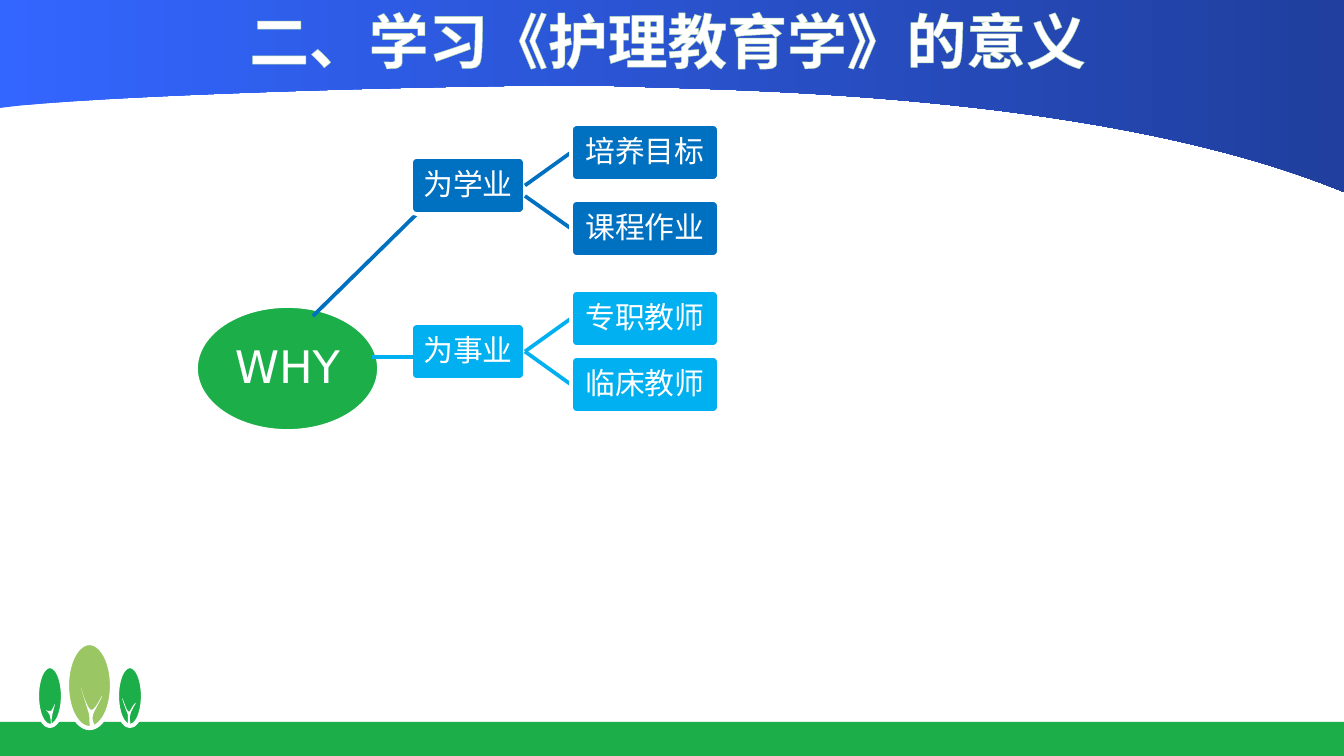
import lxml.etree
import pptx
import pptx.dml.color
import pptx.enum.shapes
import pptx.enum.text
import pptx.oxml.ns
import pptx.util

PX = 6804
GREEN, LIME, WHITE = "1CAE49", "9AC763", "FFFFFF"
CJK = "Noto Sans CJK SC"
qn = pptx.oxml.ns.qn
rgb = pptx.dml.color.RGBColor.from_string
MSO = pptx.enum.shapes.MSO_SHAPE


def add_block(kind, box, fill, line_width=0):
    block = slide.shapes.add_shape(kind, *[n * PX for n in box])
    block.shadow.inherit = False
    block.fill.solid()
    block.fill.fore_color.rgb = rgb(fill)
    if line_width:
        block.line.color.rgb = rgb(WHITE)
        block.line.width = pptx.util.Pt(line_width)
    else:
        block.line.fill.background()
    return block


def add_branch(ends, color):
    branch = slide.shapes.add_connector(
        pptx.enum.shapes.MSO_CONNECTOR.STRAIGHT, *[n * PX for n in ends])
    branch.line.color.rgb = rgb(color)
    branch.line.width = pptx.util.Pt(2)
    lxml.etree.SubElement(branch._element.spPr, qn("a:effectLst"))
    return branch


prs = pptx.Presentation()
prs.slide_width = 1344 * PX
prs.slide_height = 756 * PX
slide = prs.slides.add_slide(prs.slide_layouts[6])

add_block(MSO.RECTANGLE, (0, 722, 1344, 36), GREEN)
for crown, color in [((37, 666, 26, 60), GREEN), ((67, 643, 45, 85), LIME),
                     ((117, 666, 26, 60), GREEN)]:
    add_block(MSO.OVAL, crown, color, 2.25)

banner_outline = [(0, 0), (0, 108), (98, 94, 519, 83, 614, 86),
                  (711, 90, 1097, 90, 1344, 192), (1344, 0)]
trunk_outlines = [
    [(81, 688), (81, 689, 87, 707, 89, 714), (90, 719, 89, 726, 90, 728),
     (91, 730, 94, 728, 95, 727), (95, 725, 91, 720, 93, 715),
     (94, 711, 102, 698, 102, 696), (102, 695, 95, 711, 91, 710),
     (87, 708, 83, 694, 81, 688)],
    [(122, 698), (122, 699, 126, 710, 128, 715), (128, 719, 128, 723, 128, 724),
     (129, 726, 130, 726, 130, 724), (131, 723, 129, 719, 130, 716),
     (130, 712, 136, 703, 136, 703), (134, 702, 130, 712, 129, 712),
     (126, 711, 124, 700, 122, 698)],
    [(46, 710), (46, 710, 50, 714, 50, 716), (51, 719, 51, 725, 51, 726),
     (51, 727, 52, 727, 52, 726), (52, 724, 51, 720, 52, 718),
     (52, 714, 55, 706, 55, 704), (55, 703, 52, 711, 51, 711),
     (48, 712, 47, 710, 46, 710)],
]
for outline in [banner_outline] + trunk_outlines:
    points = [segment[i:i + 2] for segment in outline
              for i in range(0, len(segment), 2)]
    builder = slide.shapes.build_freeform(*points[0], scale=PX)
    builder.add_line_segments(points[1:], close=True)
    curve = builder.convert_to_shape()
    steps = iter(list(next(curve._element.iter(qn("a:path")))))
    for segment in outline:
        step = next(steps)
        if len(segment) == 6:
            step.tag = qn("a:cubicBezTo")
            for extra in (next(steps), next(steps)):
                step.append(extra[0])
                extra.getparent().remove(extra)
    curve.shadow.inherit = False
    curve.line.fill.background()
    if outline is banner_outline:
        curve.fill.gradient()
        curve.fill.gradient_angle = 0
        for stop, color in zip(curve.fill.gradient_stops, ("3366FF", "203F9E")):
            stop.color.rgb = rgb(color)
        curve.fill.gradient_stops[0].position = 0
        curve.fill.gradient_stops[1].position = 1
    else:
        curve.fill.solid()
        curve.fill.fore_color.rgb = rgb(WHITE)

why = add_block(MSO.OVAL, (196, 306, 183, 125), GREEN, 2)
add_branch((313, 316, 431, 200), "0070C0")
labels = [(why, "WHY", 24, "DejaVu Sans", (3, 3))]

reasons = [
    ("为学业", 157, "0070C0", [("培养目标", 124, 185), ("课程作业", 200, 196)]),
    ("为事业", 323, "00B0F0", [("专职教师", 290, 352), ("临床教师", 356, 352)]),
]
for reason, top, color, aims in reasons:
    parent = add_block(MSO.ROUNDED_RECTANGLE, (411, top, 114, 57), color, 2)
    parent.adjustments[0] = 0.1
    labels.append((parent, reason, 16, CJK, (3, 3)))
    for aim, aim_top, start in aims:
        branch = add_branch((525, start, 571, aim_top + 28), color)
        child = add_block(MSO.ROUNDED_RECTANGLE, (571, aim_top, 148, 57), color, 2)
        child.adjustments[0] = 0.1
        if abs(start - top - 28) < 2:
            branch.begin_connect(parent, 3)
        branch.end_connect(child, 1)
        labels.append((child, aim, 16, CJK, (3, 3)))
add_branch((372, 357, 429, 357), "00B0F0")

title = slide.shapes.add_textbox(227 * PX, -3 * PX, 882 * PX, 86 * PX)
labels.append((title, "二、学习《护理教育学》的意义", 32, CJK, (13, 7)))

for holder, text, size, face, (side, edge) in labels:
    frame = holder.text_frame
    frame.text = text
    frame.word_wrap = True
    frame.margin_left = frame.margin_right = side * PX
    frame.margin_top = frame.margin_bottom = edge * PX
    paragraph = frame.paragraphs[0]
    paragraph.alignment = pptx.enum.text.PP_ALIGN.CENTER
    if holder is not title:
        frame.vertical_anchor = pptx.enum.text.MSO_ANCHOR.MIDDLE
        paragraph.line_spacing = 0.9
        paragraph.space_after = pptx.util.Pt(size * 0.35)
    font = paragraph.runs[0].font
    font.size = pptx.util.Pt(size)
    font.color.rgb = rgb(WHITE)
    font.name = face
    properties = paragraph.runs[0]._r.get_or_add_rPr()
    lxml.etree.SubElement(properties, qn("a:ea"), typeface=face)

title_run = title.text_frame.paragraphs[0].runs[0]
title_run.font.bold = True
glyph_edge = lxml.etree.Element(qn("a:ln"), w=str(pptx.util.Pt(0.8)))
edge_fill = lxml.etree.SubElement(glyph_edge, qn("a:solidFill"))
lxml.etree.SubElement(edge_fill, qn("a:srgbClr"), val="ABD3B1")
title_run._r.get_or_add_rPr().insert(0, glyph_edge)

prs.save("out.pptx")
